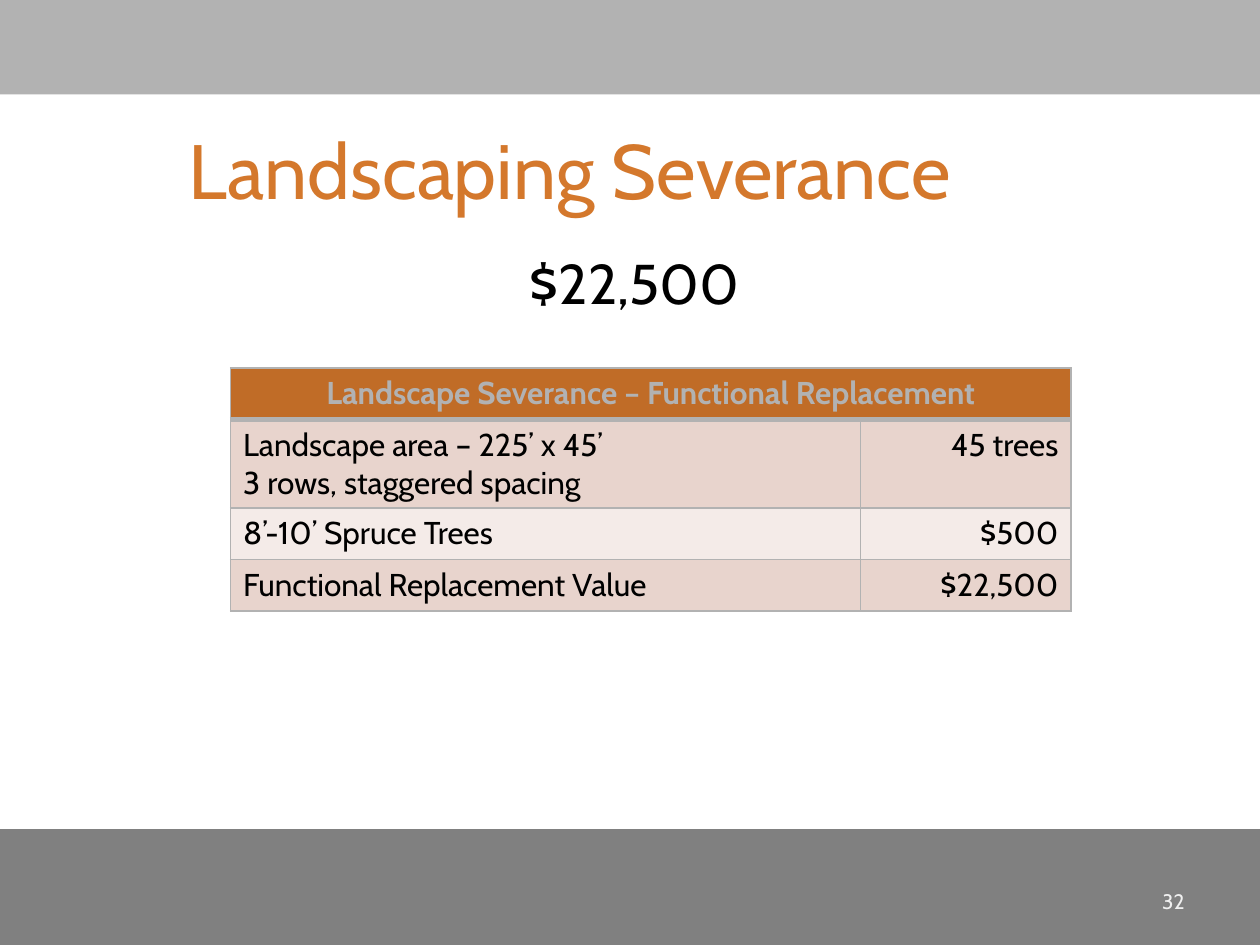
from lxml.etree import SubElement
from pptx import Presentation
from pptx.dml.color import RGBColor
from pptx.enum.shapes import MSO_SHAPE
from pptx.enum.text import MSO_ANCHOR, PP_ALIGN
from pptx.oxml.ns import qn
from pptx.util import Inches, Pt

COLORS = {
    "title": "D4782C", "head": "C06C27", "text": "000000",
    "band": "B2B2B2", "foot": "808080", "page": "F0F0F0",
    "dark": "E8D4CD", "light": "F4EBE8",
}
LEFT, MID, RIGHT = PP_ALIGN.LEFT, PP_ALIGN.CENTER, PP_ALIGN.RIGHT


def paint(name):
    return RGBColor.from_string(COLORS[name])


class Deck:
    font = "Cabin"

    def __init__(self):
        self.prs = Presentation()
        self.prs.slide_width, self.prs.slide_height = Inches(10), Inches(7.5)
        self.slide = self.prs.slides.add_slide(self.prs.slide_layouts[5])

    def style(self, frame, text, size, color, align=LEFT, bold=False):
        frame.text = text
        frame.word_wrap = True
        for para in frame.paragraphs:
            para.alignment = align
            for run in para.runs:
                font = run.font
                font.name, font.size, font.bold = self.font, Pt(size), bold
                font.color.rgb = paint(color)

    def band(self, top, height, color):
        shape = self.slide.shapes.add_shape(
            MSO_SHAPE.RECTANGLE, 0, Inches(top), Inches(10), Inches(height))
        shape.shadow.inherit = False
        shape.fill.solid()
        shape.fill.fore_color.rgb = paint(color)
        shape.line.fill.background()

    def title(self, text, box):
        shape = self.slide.shapes.title
        shape.left, shape.top, shape.width, shape.height = map(Inches, box)
        frame = shape.text_frame
        self.style(frame, text, 44, "title", MID)
        frame.vertical_anchor = MSO_ANCHOR.MIDDLE
        # The wide right inset sets the heading left of centre
        frame.margin_left, frame.margin_right = Inches(0.2), Inches(1.15)

    def label(self, text, box, size, color, align, anchor=MSO_ANCHOR.TOP):
        frame = self.slide.shapes.add_textbox(*map(Inches, box)).text_frame
        self.style(frame, text, size, color, align)
        frame.vertical_anchor = anchor

    def border(self, cell, base=1):
        props = cell._tc.get_or_add_tcPr()
        for spot, side in enumerate(("lnL", "lnR", "lnT", "lnB")):
            width = base if side == "lnB" else 1
            line = props.makeelement(qn(f"a:{side}"), {"w": str(Pt(width))})
            fill = SubElement(line, qn("a:solidFill"))
            SubElement(fill, qn("a:srgbClr"), val=COLORS["band"])
            props.insert(spot, line)

    def table(self, head, rows, spot, widths, heights):
        grid = self.slide.shapes.add_table(
            len(rows) + 1, len(widths), *map(Inches, spot),
            Inches(sum(widths)), Inches(sum(heights))).table
        for col, width in zip(grid.columns, widths):
            col.width = Inches(width)
        for row, height in zip(grid.rows, heights):
            row.height = Inches(height)

        # Header across all columns
        grid.cell(0, 0).merge(grid.cell(0, len(widths) - 1))
        self.style(grid.cell(0, 0).text_frame, head, 18, "band", MID, True)
        for cell in grid.rows[0].cells:
            self.fill(cell, "head", 3)

        # Striped body, values on the right
        for r, row in enumerate(rows, 1):
            for c, text in enumerate(row):
                cell = grid.cell(r, c)
                self.style(cell.text_frame, text, 18, "text",
                           RIGHT if c else LEFT)
                self.fill(cell, "dark" if r % 2 else "light")

    def fill(self, cell, color, base=1):
        cell.fill.solid()
        cell.fill.fore_color.rgb = paint(color)
        self.border(cell, base)


def main():
    deck = Deck()

    # Page bands
    deck.band(6.58, 0.92, "foot")
    deck.band(0, 0.75, "band")

    # Heading and total
    deck.title("Landscaping Severance", (0.25, 0.92, 9.5, 0.83))
    deck.label("$22,500", (0.25, 1.92, 9.58, 0.7), 32, "text", MID)

    # Page number
    deck.label("32", (7.17, 6.95, 2.33, 0.4), 12, "page", RIGHT,
               MSO_ANCHOR.MIDDLE)

    # Cost table
    deck.table(
        "Landscape Severance – Functional Replacement",
        [("Landscape area – 225’ x 45’\n3 rows, staggered spacing", "45 trees"),
         ("8’-10’ Spruce Trees", "$500"),
         ("Functional Replacement Value", "$22,500")],
        (1.83, 2.92), (5, 1.67), (0.41, 0.7, 0.41, 0.41))

    deck.prs.save("out.pptx")


if __name__ == "__main__":
    main()
